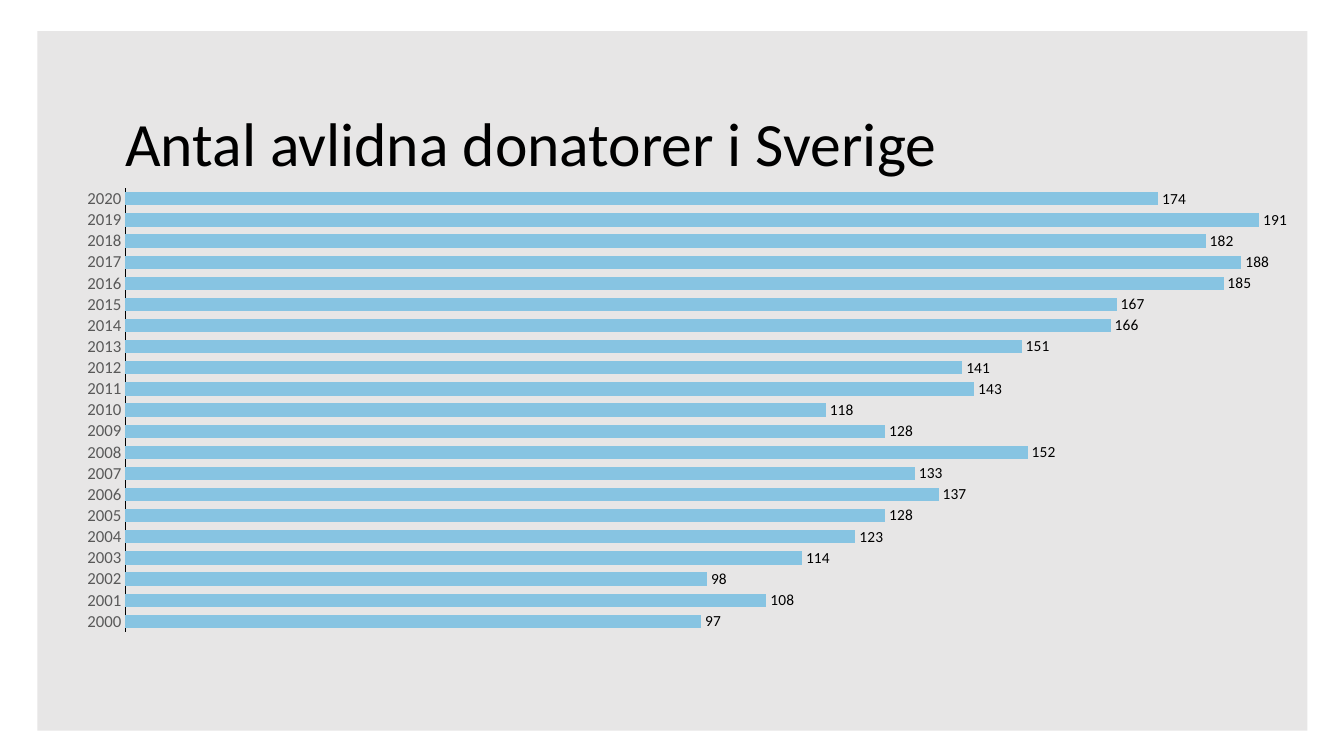
from dataclasses import dataclass

from lxml.etree import SubElement
from pptx import Presentation
from pptx.chart.data import CategoryChartData
from pptx.dml.color import RGBColor
from pptx.enum.chart import XL_CHART_TYPE as ChartType
from pptx.enum.chart import XL_LABEL_POSITION as LabelPosition
from pptx.enum.chart import XL_TICK_MARK as TickMark
from pptx.enum.shapes import MSO_SHAPE as Shape
from pptx.enum.text import MSO_ANCHOR as Anchor
from pptx.enum.text import MSO_AUTO_SIZE as AutoSize
from pptx.enum.text import PP_ALIGN as Align
from pptx.oxml.ns import qn
from pptx.util import Pt


@dataclass(frozen=True)
class Theme:
    """Colours, font and type sizes of the slide."""
    font: str = "Calibri"
    ink: RGBColor = RGBColor(0x00, 0x00, 0x00)
    muted: RGBColor = RGBColor(0x59, 0x59, 0x59)
    panel: RGBColor = RGBColor(0xE7, 0xE6, 0xE6)
    bar: RGBColor = RGBColor(0x87, 0xC4, 0xE2)
    title_size: int = 44
    chart_size: int = 10
    year_size: int = 12
    label_size: int = 11


THEME = Theme()
FIRST_YEAR = 2000
DONORS = (97, 108, 98, 114, 123, 128, 137, 133, 152, 128, 118,
          143, 141, 151, 166, 167, 185, 188, 182, 191, 174)
PLOT_LAYOUT = {"layoutTarget": "inner", "xMode": "edge", "yMode": "edge",
               "x": 0.056, "y": 0.045, "w": 0.943, "h": 0.845}


def apply(target, values):
    """Set each named attribute on the target."""
    for name, value in values.items():
        setattr(target, name, value)


def style_font(font, size, color=THEME.ink):
    """Give a font the theme face, a size and a colour."""
    apply(font, {"name": THEME.font, "size": Pt(size), "bold": False})
    font.color.rgb = color


def add_panel(page, left, top, width, height):
    """Put the plain background panel behind the title."""
    panel = page.shapes.add_shape(Shape.RECTANGLE, Pt(left), Pt(top), Pt(width), Pt(height))
    panel.shadow.inherit = False
    panel.fill.solid()
    panel.fill.fore_color.rgb = THEME.panel
    panel.line.fill.background()
    page.shapes.title.element.addprevious(panel.element)


def set_title(page, text, left, top, width, height):
    """Place and format the title placeholder."""
    title = page.shapes.title
    apply(title, {"left": Pt(left), "top": Pt(top), "width": Pt(width), "height": Pt(height)})
    frame = title.text_frame
    apply(frame, {"text": text, "word_wrap": True, "auto_size": AutoSize.NONE,
                  "vertical_anchor": Anchor.MIDDLE})
    para = frame.paragraphs[0]
    apply(para, {"alignment": Align.LEFT, "line_spacing": 0.9})
    style_font(para.runs[0].font, THEME.title_size)


def set_plot_layout(chart):
    """Fix the inner plot area as fractions of the chart."""
    area = chart.element.find(".//" + qn("c:plotArea"))
    layout = area.find(qn("c:layout"))
    if layout is None:
        layout = SubElement(area, qn("c:layout"))
        area.insert(0, layout)
    manual = SubElement(layout, qn("c:manualLayout"))
    for tag, value in PLOT_LAYOUT.items():
        SubElement(manual, qn("c:" + tag)).set("val", str(value))


def format_axes(chart):
    """Show the years and hide the value scale."""
    years = chart.category_axis
    apply(years, {"major_tick_mark": TickMark.NONE, "minor_tick_mark": TickMark.NONE,
                  "has_major_gridlines": False})
    style_font(years.tick_labels.font, THEME.year_size, THEME.muted)
    years.format.line.width = Pt(0.75)
    years.format.line.color.rgb = THEME.ink
    apply(chart.value_axis, {"visible": False, "has_major_gridlines": False,
                             "minimum_scale": 0, "maximum_scale": 200, "major_unit": 20})


def add_bar_chart(page, left, top, width, height):
    """Add the bar chart of donors per year."""
    data = CategoryChartData()
    data.categories = [str(FIRST_YEAR + step) for step in range(len(DONORS))]
    data.add_series("Series 1", DONORS)
    chart = page.shapes.add_chart(ChartType.BAR_CLUSTERED, Pt(left), Pt(top),
                                  Pt(width), Pt(height), data).chart
    apply(chart, {"has_legend": False, "has_title": False})
    style_font(chart.font, THEME.chart_size)
    set_plot_layout(chart)
    format_axes(chart)
    plot = chart.plots[0]
    apply(plot, {"gap_width": 60, "vary_by_categories": False})
    bars = plot.series[0]
    bars.format.fill.solid()
    bars.format.fill.fore_color.rgb = THEME.bar
    labels = bars.data_labels
    apply(labels, {"show_value": True, "position": LabelPosition.OUTSIDE_END})
    style_font(labels.font, THEME.label_size)


def main():
    """Build and save the slide."""
    deck = Presentation()
    apply(deck, {"slide_width": Pt(960), "slide_height": Pt(540)})
    page = deck.slides.add_slide(deck.slide_layouts[5])
    add_panel(page, 26.64, 22.32, 907.2, 499.68)
    set_title(page, "Antal avlidna donatorer i Sverige", 82.3, 52.56, 828, 104.4)
    add_bar_chart(page, 39.2, 117.6, 899.28, 375.12)
    deck.save("out.pptx")


if __name__ == "__main__":
    main()
